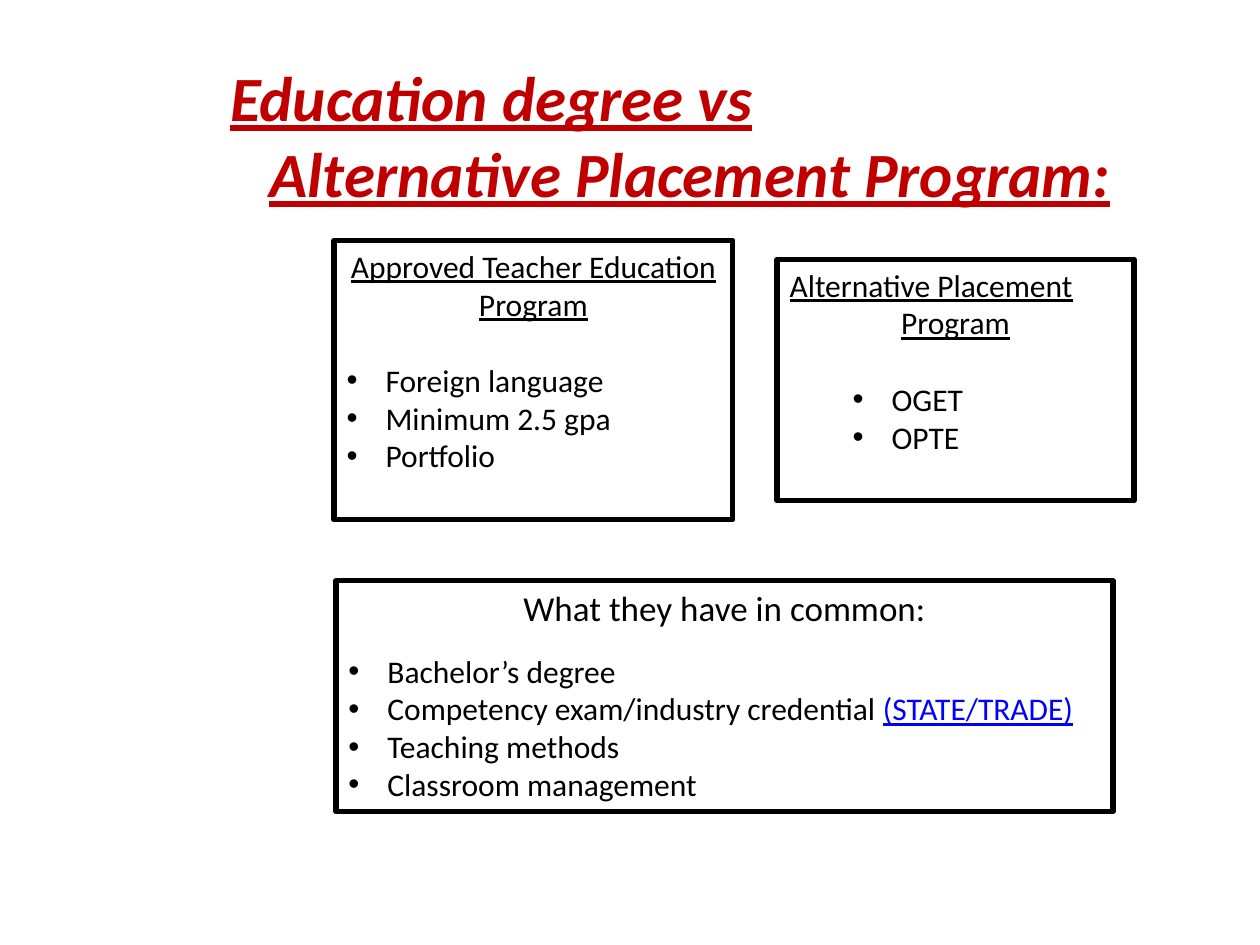
from lxml.etree import SubElement
from pptx import Presentation
from pptx.dml.color import RGBColor
from pptx.enum.shapes import MSO_SHAPE
from pptx.enum.text import MSO_ANCHOR, MSO_AUTO_SIZE, PP_ALIGN
from pptx.oxml.ns import qn
from pptx.util import Inches, Pt

COLUMNS, ROWS = 120, 90
WIDTH, HEIGHT = Inches(10), Inches(7.5)
BLACK, RED, BLUE = "000000", "C00000", "0000FF"


def color(hex_string):
    return RGBColor.from_string(hex_string)


def place(shape, left, top, width, height):
    shape.left = round(WIDTH * left / COLUMNS)
    shape.top = round(HEIGHT * top / ROWS)
    shape.width = round(WIDTH * width / COLUMNS)
    shape.height = round(HEIGHT * height / ROWS)


def prepare_frame(shape, side_inset=0.1):
    frame = shape.text_frame
    frame.word_wrap = True
    frame.auto_size = MSO_AUTO_SIZE.NONE
    frame.vertical_anchor = MSO_ANCHOR.TOP
    frame.margin_left = frame.margin_right = Inches(side_inset)
    frame.margin_top = frame.margin_bottom = Inches(0.05)
    return frame


def format_paragraph(paragraph, align, indent=0, bullet=None, tab=None, gap=0):
    paragraph.alignment = align
    paragraph.space_before = Pt(gap)
    properties = paragraph._p.get_or_add_pPr()
    properties.set("marL", str(Inches(indent)))
    properties.set("indent", str(-Inches(0.31) if bullet else 0))
    if bullet:
        SubElement(properties, qn("a:buFont"), typeface="Arial")
        SubElement(properties, qn("a:buChar"), char=bullet)
    else:
        SubElement(properties, qn("a:buNone"))
    if tab:
        stops = SubElement(properties, qn("a:tabLst"))
        SubElement(stops, qn("a:tab"), pos=str(Inches(tab)), algn="l")


def format_run(run, size, hex_string=BLACK, underline=False, strong=False):
    font = run.font
    font.name = "Calibri"
    font.size = Pt(size)
    font.color.rgb = color(hex_string)
    font.underline = underline
    font.bold = font.italic = strong


def write_heading(frame, lines, size, tab=None, **run_format):
    frame.text = "\n".join(lines)
    for paragraph, line in zip(frame.paragraphs, lines):
        ruled = line.endswith("\t")
        align = PP_ALIGN.LEFT if ruled else PP_ALIGN.CENTER
        format_paragraph(paragraph, align, tab=tab if ruled else None)
        format_run(paragraph.runs[0], size, **run_format)


def write_bullets(frame, items, indent, gap):
    for number, item in enumerate(items):
        paragraph = frame.add_paragraph()
        paragraph.text = item
        format_paragraph(paragraph, PP_ALIGN.LEFT, indent, "•",
                         gap=0 if number else gap)
        format_run(paragraph.runs[0], 18)


def build_box(shape, position, heading, items, size=18, underline=True,
              indent=0.31, gap=22, tab=None):
    place(shape, *position)
    shape.fill.background()
    shape.line.color.rgb = color(BLACK)
    shape.line.width = Pt(3)
    frame = prepare_frame(shape)
    write_heading(frame, heading, size, tab, underline=underline)
    write_bullets(frame, items, indent, gap)
    return frame


def main():
    presentation = Presentation()
    presentation.slide_width, presentation.slide_height = WIDTH, HEIGHT
    slide = presentation.slides.add_slide(presentation.slide_layouts[3])
    title, education, alternative = slide.placeholders

    place(title, 14, 5, 103.4, 15.7)
    write_heading(prepare_frame(title, 0.66),
                  ["Education degree vs\t", "Alternative Placement Program:"],
                  36, tab=7.28, hex_string=RED, underline=True, strong=True)

    build_box(education, (31.8, 22.9, 38, 26.6),
              ["Approved Teacher Education Program"],
              ["Foreign language", "Minimum 2.5 gpa", "Portfolio"])
    build_box(alternative, (74, 24.7, 34, 23),
              ["Alternative Placement\t", "Program"],
              ["OGET", "OPTE"], indent=0.81, tab=2.58)

    common = slide.shapes.add_shape(MSO_SHAPE.RECTANGLE, 0, 0, 0, 0)
    common.shadow.inherit = False
    frame = build_box(common, (32, 55.3, 74, 22),
                      ["What they have in common:"],
                      ["Bachelor’s degree",
                       "Competency exam/industry credential ",
                       "Teaching methods", "Classroom management"],
                      size=20, underline=False, gap=13)
    credential = frame.paragraphs[2].add_run()
    credential.text = "(STATE/TRADE)"
    format_run(credential, 18, BLUE, underline=True)

    presentation.save("out.pptx")


if __name__ == "__main__":
    main()
